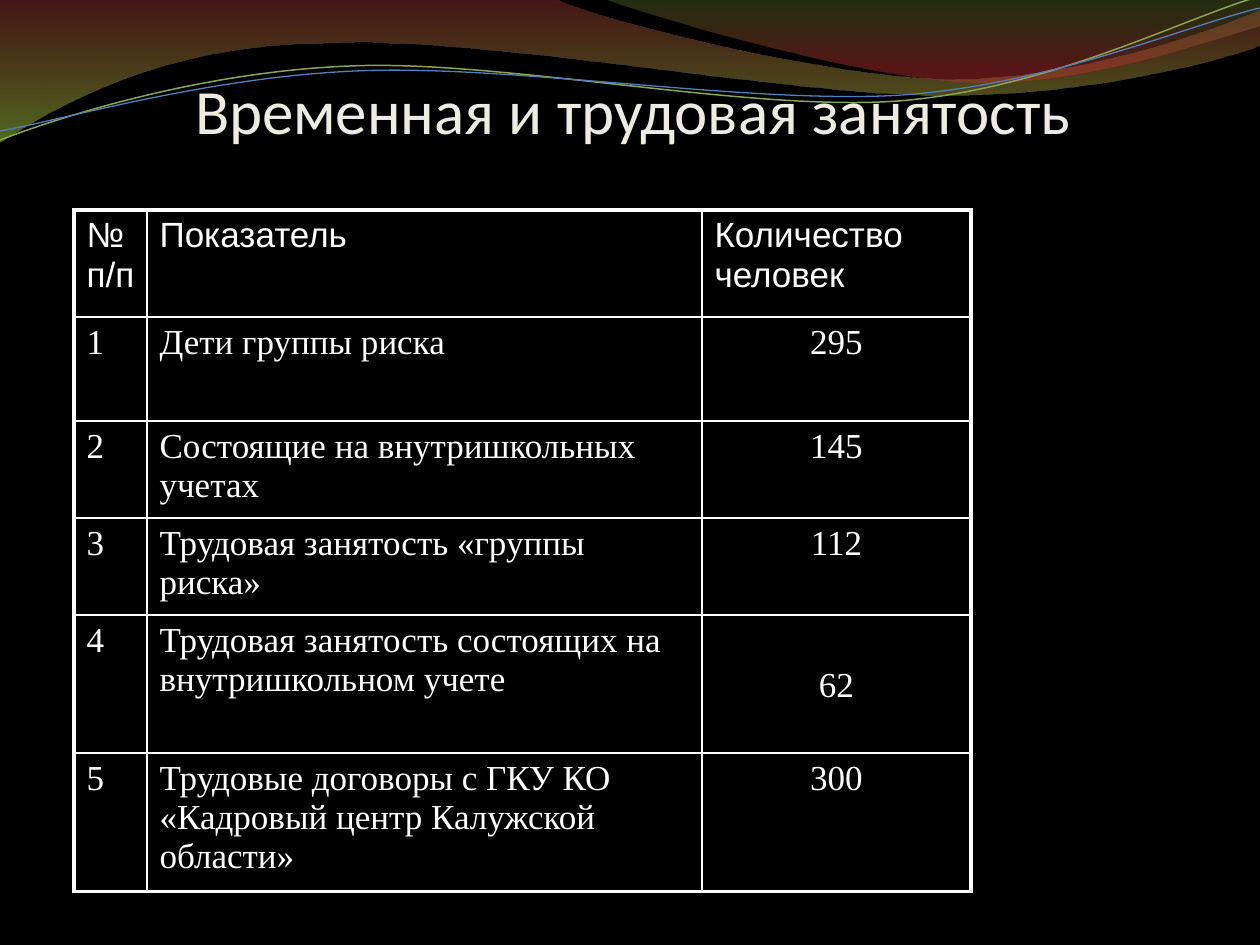
from lxml import etree
from pptx import Presentation
from pptx.dml.color import RGBColor
from pptx.enum.text import MSO_ANCHOR, PP_ALIGN
from pptx.oxml import parse_xml
from pptx.oxml.ns import nsdecls, qn
from pptx.util import Emu, Pt

LEFT, CENTER = PP_ALIGN.LEFT, PP_ALIGN.CENTER
BOTTOM = MSO_ANCHOR.BOTTOM
EMU_PER_PX = 914400 / 126
WHITE = "FFFFFF"
THICK, THIN = 2.25, 1

# Each segment is one point (line) or three points (cubic curve), in px.
RED_WAVE = [(0, -1), [
    [(554, -1)],
    [(600, 21), (837, 79), (955, 79)],
    [(1075, 79), (1207, 33), (1260, 11)],
    [(1261, 45)],
    [(1239, 55), (1096, 96), (940, 95)],
    [(784, 95), (481, 35), (324, 43)],
    [(163, 44), (58, 105), (-1, 142)],
]]
GREEN_WAVE = [(604, -1), [
    [(641, 14), (859, 78), (969, 82)],
    [(1079, 87), (1211, 40), (1260, 26)],
    [(1260, 0)],
]]
GREEN_LINE = [(0, 140), [
    [(60, 117), (199, 72), (349, 66)],
    [(498, 59), (747, 112), (898, 101)],
    [(1049, 89), (1182, 19), (1257, -3)],
]]
BLUE_LINE = [(0, 131), [
    [(59, 121), (207, 77), (357, 71)],
    [(508, 64), (752, 105), (903, 95)],
    [(1053, 84), (1185, 26), (1260, 8)],
]]

COLUMN_WIDTHS = [73, 555, 269]
ROW_HEIGHTS = [107, 104, 97, 97, 138, 54]  # the last row grows with its text
ROWS = [
    ("№ п/п", "Показатель", "Количество человек"),
    ("1", "Дети группы риска", "295"),
    ("2", "Состоящие на внутришкольных учетах", "145"),
    ("3", "Трудовая занятость «группы риска»", "112"),
    ("4", "Трудовая занятость состоящих на внутришкольном учете", "62"),
    ("5", "Трудовые договоры с ГКУ КО «Кадровый центр Калужской области»", "300"),
]
LOWERED_CELL = (4, 2)


def px(value):
    return Emu(round(value * EMU_PER_PX))


def rgb(color):
    return RGBColor.from_string(color)


def write(tf, text, size=20, font="Times New Roman", color=WHITE, align=LEFT):
    p = tf.paragraphs[0]
    p.alignment = align
    r = p.add_run()
    r.text = text
    r.font.size = Pt(size)
    r.font.name = font
    r.font.color.rgb = rgb(color)


def add_outline(s, outline, close):
    """Build a freeform through the segment ends, then bend its cubic segments."""
    (x, y), segments = outline
    builder = s.shapes.build_freeform(px(x), px(y), scale=1.0)
    ends = [(px(x), px(y)) for *_, (x, y) in segments]
    builder.add_line_segments(ends, close=close)
    sp = builder.convert_to_shape()
    sp.shadow.inherit = False
    lines = list(sp._element.iter(qn("a:lnTo")))
    for line, segment in zip(lines, segments):
        if len(segment) == 3:
            curve = etree.Element(qn("a:cubicBezTo"))
            for x, y in segment:
                etree.SubElement(curve, qn("a:pt"),
                                 x=str(px(x) - sp.left), y=str(px(y) - sp.top))
            line.getparent().replace(line, curve)
    return sp


def add_wave(s, outline, stops):
    """Add a closed shape with a top-down gradient of (position, colour, opacity)."""
    sp = add_outline(s, outline, close=True)
    sp.line.fill.background()
    stop_xml = "".join(
        f'<a:gs pos="{pos * 1000}"><a:srgbClr val="{color}">'
        f'<a:alpha val="{opacity * 1000}"/></a:srgbClr></a:gs>'
        for pos, color, opacity in stops)
    gradient = parse_xml(
        f'<a:gradFill {nsdecls("a")} rotWithShape="1"><a:gsLst>{stop_xml}</a:gsLst>'
        '<a:lin ang="5400000" scaled="0"/></a:gradFill>')
    sp._element.spPr.find(qn("a:custGeom")).addnext(gradient)


def add_curve(s, outline, color, width):
    sp = add_outline(s, outline, close=False)
    sp.fill.background()
    sp.line.color.rgb = rgb(color)
    sp.line.width = Pt(width)


def add_title(s, text):
    tf = s.shapes.add_textbox(px(73), px(84), px(1134), px(63)).text_frame
    tf.word_wrap = True
    tf.vertical_anchor = BOTTOM
    tf.margin_left = tf.margin_right = tf.margin_bottom = 0
    write(tf, text, size=36, font="Calibri", color="EEECE1", align=CENTER)


def set_borders(cell, widths):
    tcPr = cell._tc.get_or_add_tcPr()
    for side, width in widths.items():
        ln = etree.SubElement(tcPr, qn(f"a:ln{side}"), w=str(Pt(width)))
        fill = etree.SubElement(ln, qn("a:solidFill"))
        etree.SubElement(fill, qn("a:srgbClr"), val=WHITE)


def add_grid(s):
    last_row, last_col = len(ROWS) - 1, len(COLUMN_WIDTHS) - 1
    table = s.shapes.add_table(
        len(ROWS), len(COLUMN_WIDTHS), px(74), px(210),
        px(sum(COLUMN_WIDTHS)), px(sum(ROW_HEIGHTS))).table
    table.first_row = table.horz_banding = False
    for column, width in zip(table.columns, COLUMN_WIDTHS):
        column.width = px(width)
    for row, height in zip(table.rows, ROW_HEIGHTS):
        row.height = px(height)
    for i, texts in enumerate(ROWS):
        for j, text in enumerate(texts):
            cell = table.cell(i, j)
            set_borders(cell, {
                "L": THICK if j == 0 else THIN,
                "R": THICK if j == last_col else THIN,
                "T": THICK if i == 0 else THIN,
                "B": THICK if i == last_row else THIN,
            })
            cell.fill.background()
            if (i, j) == LOWERED_CELL:
                cell.margin_top = px(51)
            write(cell.text_frame, text,
                  font="Arial" if i == 0 else "Times New Roman",
                  align=CENTER if i and j == last_col else LEFT)


def main():
    prs = Presentation()
    prs.slide_width, prs.slide_height = px(1260), px(945)
    s = prs.slides.add_slide(prs.slide_layouts[6])
    s.background.fill.solid()
    s.background.fill.fore_color.rgb = rgb("000000")
    add_wave(s, RED_WAVE, [(0, "973330", 45), (100, "95C238", 55)])
    add_wave(s, GREEN_WAVE, [(0, "769537", 30), (80, "BE3330", 45)])
    add_curve(s, GREEN_LINE, "89A54F", 0.85)
    add_curve(s, BLUE_LINE, "4F81BD", 0.75)
    add_title(s, "Временная и трудовая занятость ")
    add_grid(s)
    prs.save("out.pptx")


if __name__ == "__main__":
    main()
